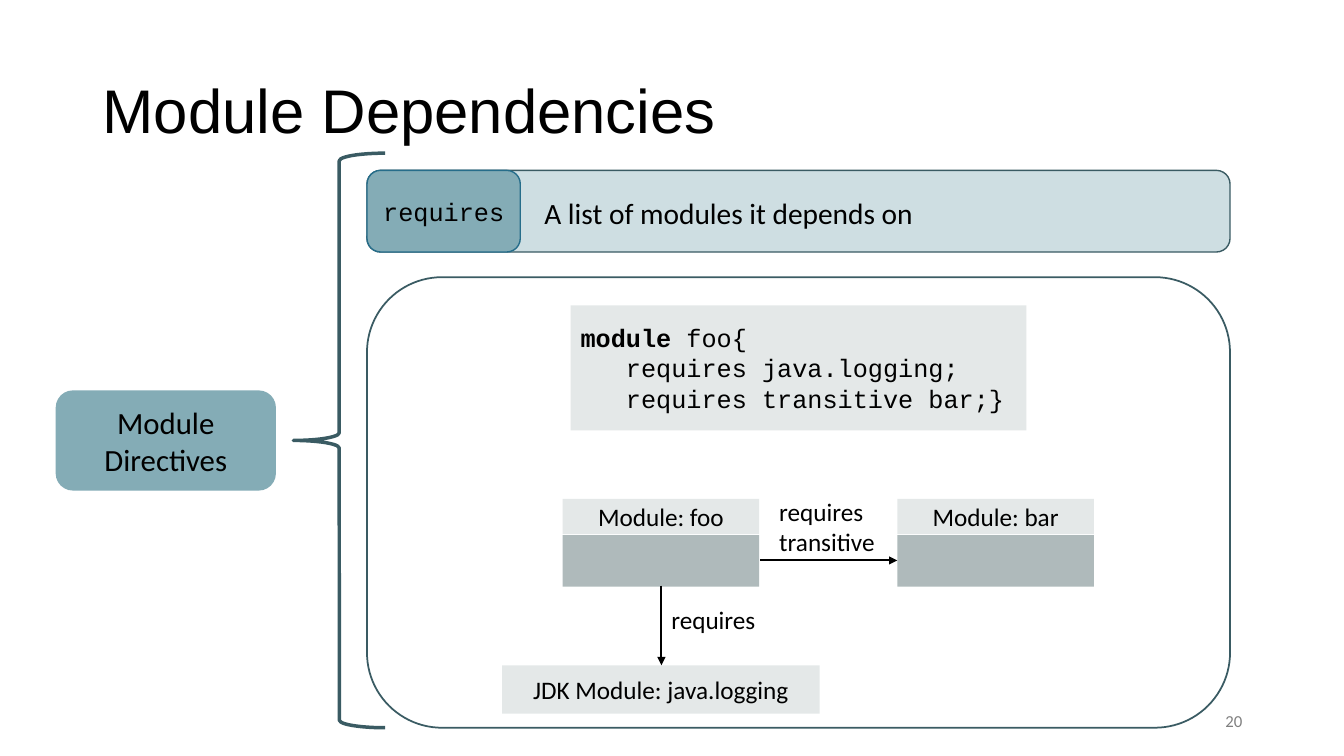
from pptx import Presentation, util as u
from pptx.dml.color import RGBColor
from pptx.enum import shapes, text
from pptx.oxml import ns, xmlchemy as xml

BOX = shapes.MSO_SHAPE.RECTANGLE
ROUND = shapes.MSO_SHAPE.ROUNDED_RECTANGLE
BRACE = shapes.MSO_SHAPE.LEFT_BRACE
MID, TOP = text.MSO_ANCHOR.MIDDLE, text.MSO_ANCHOR.TOP
LEFT, MAIN, RIGHT = text.PP_ALIGN.LEFT, text.PP_ALIGN.CENTER, text.PP_ALIGN.RIGHT
BLACK, DARK, TEAL, PALE, LIGHT, GREY = "000000", "3A5B63", "84ACB6", "CEDEE2", "E4E8E8", "AFBABB"


def color(code):
    return RGBColor.from_string(code)


def write(frame, words, size=18, font="Calibri", ink=BLACK, align=LEFT,
          anchor=MID, wrap=True, lead="", indent=0, space=1):
    frame.word_wrap = wrap
    frame.vertical_anchor = anchor
    for row, line in enumerate(words.split("\n")):
        para = frame.add_paragraph() if row else frame.paragraphs[0]
        para.alignment = align
        para.line_spacing = space
        if row and indent:
            para._p.get_or_add_pPr().set("marL", str(u.Inches(indent)))
        parts = [(line, False)]
        if lead and not row:
            parts = [(lead, True), (line, False)]
        for part, bold in parts:
            run = para.add_run()
            run.text = part
            run.font.name = font
            run.font.size = u.Pt(size)
            run.font.bold = bold
            run.font.color.rgb = color(ink)


class Deck:
    """Draw styled elements on the current slide."""

    def __init__(self, show):
        self.slide = show.slides.add_slide(show.slide_layouts[6])

    def shape(self, kind, x, y, w, h, fill=None, line=None, width=1, words="", **style):
        item = self.slide.shapes.add_shape(kind, *map(u.Inches, (x, y, w, h)))
        item.shadow.inherit = False
        if fill:
            item.fill.solid()
            item.fill.fore_color.rgb = color(fill)
        else:
            item.fill.background()
        if line:
            item.line.color.rgb = color(line)
            item.line.width = u.Pt(width)
        else:
            item.line.fill.background()
        if words:
            write(item.text_frame, words, **{"align": MAIN, **style})

    def label(self, x, y, w, h, words, **style):
        item = self.slide.shapes.add_textbox(*map(u.Inches, (x, y, w, h)))
        write(item.text_frame, words, **{"anchor": TOP, **style})

    def arrow(self, *ends):
        item = self.slide.shapes.add_connector(
            shapes.MSO_CONNECTOR.STRAIGHT, *map(u.Inches, ends))
        item.line.color.rgb = color(BLACK)
        item.line.width = u.Pt(1.5)
        tip = xml.OxmlElement("a:tailEnd")
        tip.set("type", "triangle")
        item.line._get_or_add_ln().append(tip)
        props = item._element.find(ns.qn("p:spPr"))
        props.append(xml.OxmlElement("a:effectLst"))

    def module(self, x, name):
        self.shape(BOX, x, 5.31, 1.95, 0.51, GREY)
        self.shape(BOX, x, 4.95, 1.95, 0.35, LIGHT, words=f"Module: {name}")


def main():
    show = Presentation()
    show.slide_width, show.slide_height = u.Inches(13.33), u.Inches(7.5)
    deck = Deck(show)
    deck.label(0.92, 0.4, 11.5, 1.45, "Module Dependencies", size=44,
               font="Arial", anchor=MID, space=0.9)
    deck.shape(ROUND, 0.56, 3.88, 2.17, 0.98, TEAL, TEAL,
               words="Module Directives", size=22)
    deck.shape(ROUND, 3.64, 1.69, 8.56, 0.81, PALE, DARK)
    deck.shape(ROUND, 3.64, 1.69, 1.52, 0.81, TEAL, "266D8A",
               words="requires", font="Courier New")
    deck.label(5.3, 1.89, 6.75, 0.45, "A list of modules it depends on", size=21)
    deck.shape(BOX, 5.66, 3.03, 4.52, 1.24, LIGHT, lead="module",
               words=" foo{\nrequires java.logging;\nrequires transitive bar;}",
               font="Courier New", align=LEFT, indent=0.45)
    deck.shape(ROUND, 3.64, 2.75, 8.56, 4.47, line=DARK, width=1.25)
    for x, name in ((5.58, "foo"), (8.9, "bar")):
        deck.module(x, name)
    deck.shape(BOX, 4.98, 6.6, 3.15, 0.48, LIGHT, words="JDK Module: java.logging")
    deck.arrow(6.56, 5.81, 6.56, 6.6)
    deck.label(6.56, 5.95, 1.05, 0.4, "requires", wrap=False)
    deck.arrow(7.54, 5.56, 8.9, 5.56)
    deck.label(7.63, 4.87, 1.18, 0.71, "requires transitive")
    deck.shape(BRACE, 2.91, 1.52, 0.91, 5.7, line=DARK, width=2.5)
    deck.label(9.42, 6.95, 3, 0.4, "20", size=12, ink="808080", align=RIGHT, anchor=MID)
    show.save("out.pptx")


if __name__ == "__main__":
    main()
